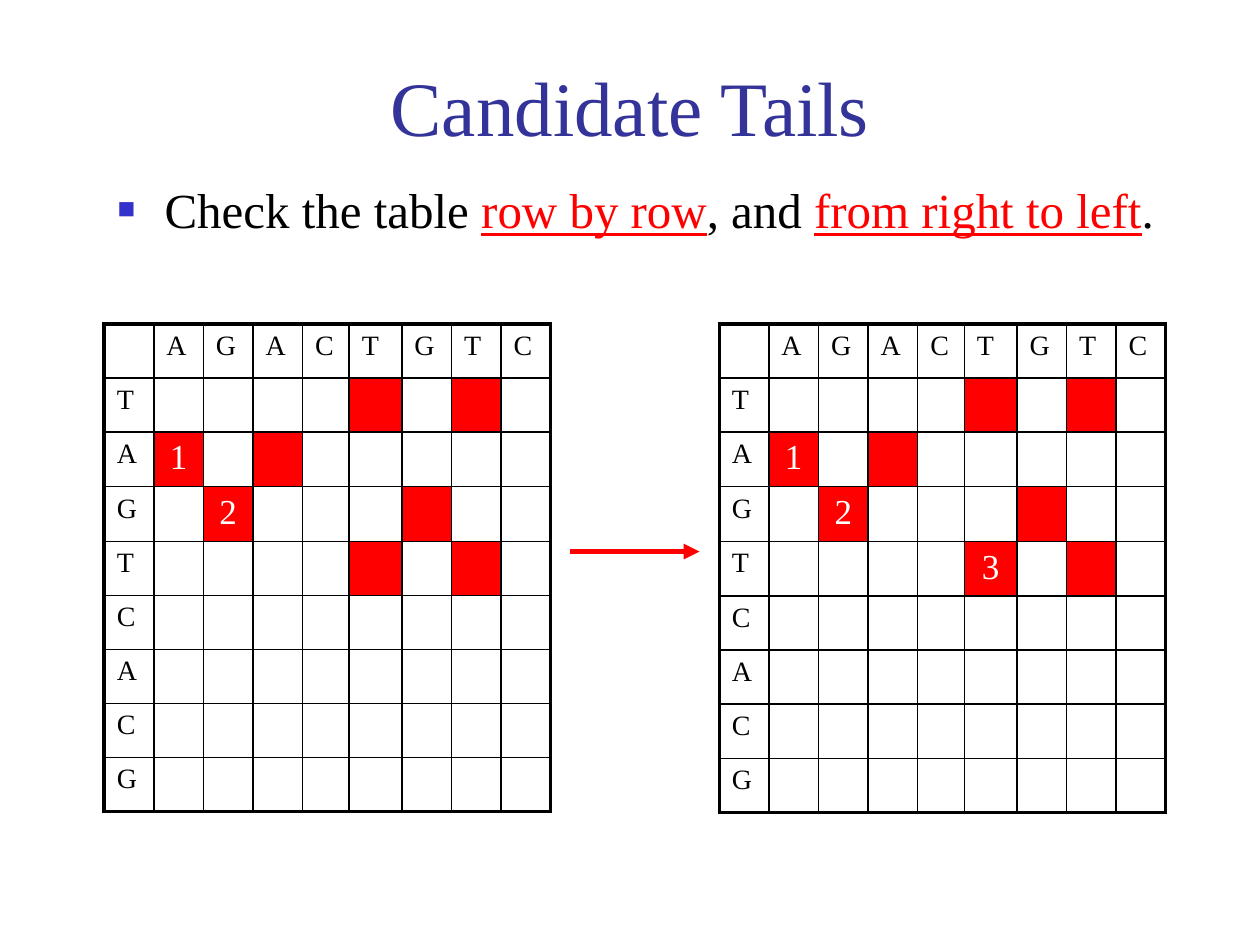
from lxml.etree import SubElement
from pptx import Presentation
from pptx.dml.color import RGBColor
from pptx.enum.shapes import MSO_CONNECTOR
from pptx.enum.text import MSO_ANCHOR, PP_ALIGN
from pptx.oxml.ns import qn
from pptx.util import Cm, Pt

COLORS = {"title": "333399", "bullet": "3333CC", "text": "000000",
          "accent": "FF0000", "number": "FFFFFF", "border": "000000"}
FONT = "Times New Roman"
COLUMN_LETTERS = "AGACTGTC"
ROW_LETTERS = "TAGTCACG"
MATCHED_ROWS = 4
COLUMN_WIDTHS = [1, 1, 1, 1, 0.94, 1.06, 1, 1, 1]
ROW_HEIGHT = 1.09
TABLE_TOP = 6.53


def add_span(para, text, size, color, **formats):
    """Add one run of text in the slide's font."""
    span = para.add_run()
    span.text = text
    for name, value in {"name": FONT, "size": Pt(size), **formats}.items():
        setattr(span.font, name, value)
    span.font.color.rgb = RGBColor.from_string(COLORS[color])


def add_color(parent, color):
    """Put a solid colour fill into an XML element."""
    fill = SubElement(parent, qn("a:solidFill"))
    SubElement(fill, qn("a:srgbClr"), val=COLORS[color])


def add_title(page, text):
    """Place and format the title placeholder."""
    box = page.shapes.title
    place = {"left": 2.12, "top": 1.06, "width": 21.17, "height": 2.13}
    for name, value in place.items():
        setattr(box, name, Cm(value))
    box.text_frame.vertical_anchor = MSO_ANCHOR.BOTTOM
    para = box.text_frame.paragraphs[0]
    para.alignment = PP_ALIGN.CENTER
    add_span(para, text, 44, "title")


def add_bullet(page, pieces):
    """Add the bulleted line from pairs of text and emphasis."""
    box = page.shapes.add_textbox(Cm(2.12), Cm(3.73), Cm(21.59), Cm(1.6))
    box.text_frame.word_wrap = True
    para = box.text_frame.paragraphs[0]
    para.line_spacing = 0.8
    for text, emphasis in pieces:
        add_span(para, text, 28, "accent" if emphasis else "text",
                 underline=emphasis)
    properties = para._p.get_or_add_pPr()
    properties.set("marL", str(Cm(0.95)))
    properties.set("indent", str(-Cm(0.95)))
    bullet_color = SubElement(properties, qn("a:buClr"))
    SubElement(bullet_color, qn("a:srgbClr"), val=COLORS["bullet"])
    SubElement(properties, qn("a:buSzPct"), val="60000")
    SubElement(properties, qn("a:buFont"), typeface=FONT)
    SubElement(properties, qn("a:buChar"), char="■")


def set_borders(cell, row, column):
    """Draw thick borders on the table's outside and thin ones inside."""
    outer = {"a:lnL": column == 0, "a:lnR": column == len(COLUMN_LETTERS),
             "a:lnT": row == 0, "a:lnB": row == len(ROW_LETTERS)}
    properties = cell._tc.get_or_add_tcPr()
    for tag, thick in outer.items():
        line = SubElement(properties, qn(tag), w=str(Pt(2.25 if thick else 1)))
        add_color(line, "border")


def fill_cell(cell, row, column, numbers):
    """Give a cell its borders, fill and letter or number."""
    set_borders(cell, row, column)
    para = cell.text_frame.paragraphs[0]
    headers = {(0, index): letter for index, letter in enumerate(COLUMN_LETTERS, 1)}
    headers |= {(index, 0): letter for index, letter in enumerate(ROW_LETTERS, 1)}
    matched = (0 < row <= MATCHED_ROWS and column > 0
               and headers[row, 0] == headers[0, column])
    if matched:
        cell.fill.solid()
        cell.fill.fore_color.rgb = RGBColor.from_string(COLORS["accent"])
    else:
        cell.fill.background()
    if (row, column) in headers:
        add_span(para, headers[row, column], 16, "text")
    elif (row, column) in numbers:
        para.alignment = PP_ALIGN.CENTER
        add_span(para, numbers[row, column], 20, "number")


def add_match_table(page, left, numbers):
    """Add a table of matching letters with numbered candidates."""
    rows, columns = len(ROW_LETTERS) + 1, len(COLUMN_LETTERS) + 1
    table = page.shapes.add_table(
        rows, columns, Cm(left), Cm(TABLE_TOP),
        Cm(sum(COLUMN_WIDTHS)), Cm(rows * ROW_HEIGHT)).table
    table.first_row = table.horz_banding = False
    for column, width in zip(table.columns, COLUMN_WIDTHS):
        column.width = Cm(width)
    for row in range(rows):
        table.rows[row].height = Cm(ROW_HEIGHT)
        for column in range(columns):
            fill_cell(table.cell(row, column), row, column, numbers)


def add_arrow(page, left, right, top):
    """Add a horizontal arrow pointing right."""
    arrow = page.shapes.add_connector(
        MSO_CONNECTOR.STRAIGHT, Cm(left), Cm(top), Cm(right), Cm(top))
    arrow.line.width = Pt(3)
    arrow.line.color.rgb = RGBColor.from_string(COLORS["accent"])
    SubElement(arrow.line._get_or_add_ln(), qn("a:tailEnd"), type="triangle")
    SubElement(arrow._element.spPr, qn("a:effectLst"))


def main():
    """Build and save the slide."""
    deck = Presentation()
    deck.slide_width, deck.slide_height = Cm(25.4), Cm(19.05)
    page = deck.slides.add_slide(deck.slide_layouts[5])
    add_title(page, "Candidate Tails")
    add_bullet(page, [("Check the table ", False), ("row by row", True),
                      (", and ", False), ("from right to left", True),
                      (".", False)])
    first_numbers = {(2, 1): "1", (3, 2): "2"}
    add_match_table(page, 14.5, {**first_numbers, (4, 5): "3"})
    add_arrow(page, 11.5, 14.1, 11.12)
    add_match_table(page, 2.1, first_numbers)
    deck.save("out.pptx")


if __name__ == "__main__":
    main()
